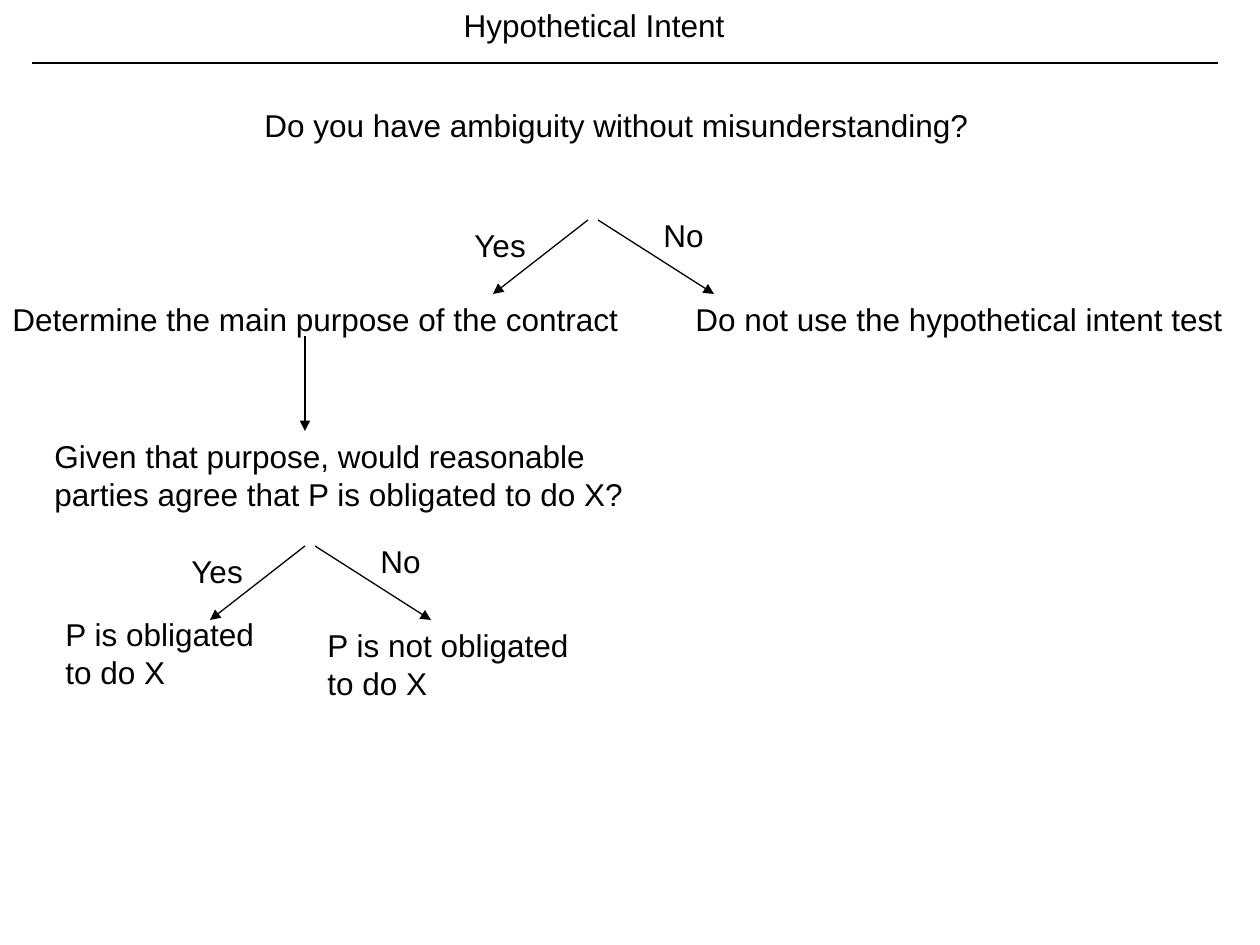
"""Build a decision tree slide about hypothetical intent."""
import pptx
import pptx.dml.color
import pptx.enum.shapes
import pptx.enum.text
import pptx.oxml
import pptx.oxml.ns
import pptx.util

BLACK = pptx.dml.color.RGBColor(0, 0, 0)
EMU_PER_PX = 914400 / 126
LINE_HEIGHT = 50
TWO_LINES = 88


def px(length):
    return pptx.util.Emu(round(length * EMU_PER_PX))


def set_attributes(target, values):
    for name, value in values.items():
        setattr(target, name, value)


class DecisionTree:
    font = {"name": "Arial", "size": pptx.util.Pt(18), "bold": False}
    frame = {
        "word_wrap": True,
        "auto_size": pptx.enum.text.MSO_AUTO_SIZE.SHAPE_TO_FIT_TEXT,
        "vertical_anchor": pptx.enum.text.MSO_ANCHOR.TOP,
    }

    def __init__(self, slide):
        self.slide = slide

    def fill_text(self, shape, text):
        shape.text_frame.text = text
        set_attributes(shape.text_frame, self.frame)
        paragraph = shape.text_frame.paragraphs[0]
        paragraph.alignment = pptx.enum.text.PP_ALIGN.LEFT
        font = paragraph.runs[0].font
        set_attributes(font, self.font)
        font.color.rgb = BLACK

    def title(self, text, left, top, width, height=LINE_HEIGHT):
        shape = self.slide.shapes.title
        bounds = {"left": left, "top": top, "width": width, "height": height}
        set_attributes(shape, {name: px(value) for name, value in bounds.items()})
        self.fill_text(shape, text)

    def text(self, text, left, top, width, height=LINE_HEIGHT):
        shape = self.slide.shapes.add_textbox(px(left), px(top), px(width), px(height))
        self.fill_text(shape, text)

    def line(self, start, end, arrow=True):
        connector = self.slide.shapes.add_connector(
            pptx.enum.shapes.MSO_CONNECTOR.STRAIGHT, *map(px, start + end))
        connector.line.color.rgb = BLACK
        connector.line.width = pptx.util.Pt(0.75)
        properties = connector._element.spPr
        if arrow:
            tail = pptx.oxml.parse_xml(
                f'<a:tailEnd {pptx.oxml.ns.nsdecls("a")} type="triangle"/>')
            properties.find(pptx.oxml.ns.qn("a:ln")).append(tail)
        effects = pptx.oxml.parse_xml(f'<a:effectLst {pptx.oxml.ns.nsdecls("a")}/>')
        properties.append(effects)

    def branch(self, left, top):
        self.line((left, top), (left - 95, top + 74))
        self.line((left + 10, top), (left + 126, top + 74))
        self.text("Yes", left - 126, top, 84)
        self.text("No", left + 63, top - 10, 73)


def main():
    presentation = pptx.Presentation()
    set_attributes(presentation, {"slide_width": px(1260), "slide_height": px(945)})
    slide = presentation.slides.add_slide(presentation.slide_layouts[5])
    tree = DecisionTree(slide)

    tree.title("Hypothetical Intent", 451, 0, 325)
    tree.line((32, 63), (1218, 63), arrow=False)

    tree.text("Do you have ambiguity without misunderstanding?", 252, 100, 746)
    tree.branch(588, 220)
    tree.text("Determine the main purpose of the contract", 0, 294, 651)
    tree.text("Do not use the hypothetical intent test", 683, 294, 577)

    tree.line((305, 336), (305, 431))
    tree.text("Given that purpose, would reasonable parties agree that P is obligated to do X?",
              42, 431, 599, TWO_LINES)
    tree.branch(305, 546)
    tree.text("P is obligated to do X", 53, 609, 220, TWO_LINES)
    tree.text("P is not obligated to do X", 315, 620, 273, TWO_LINES)

    presentation.save("out.pptx")


if __name__ == "__main__":
    main()
